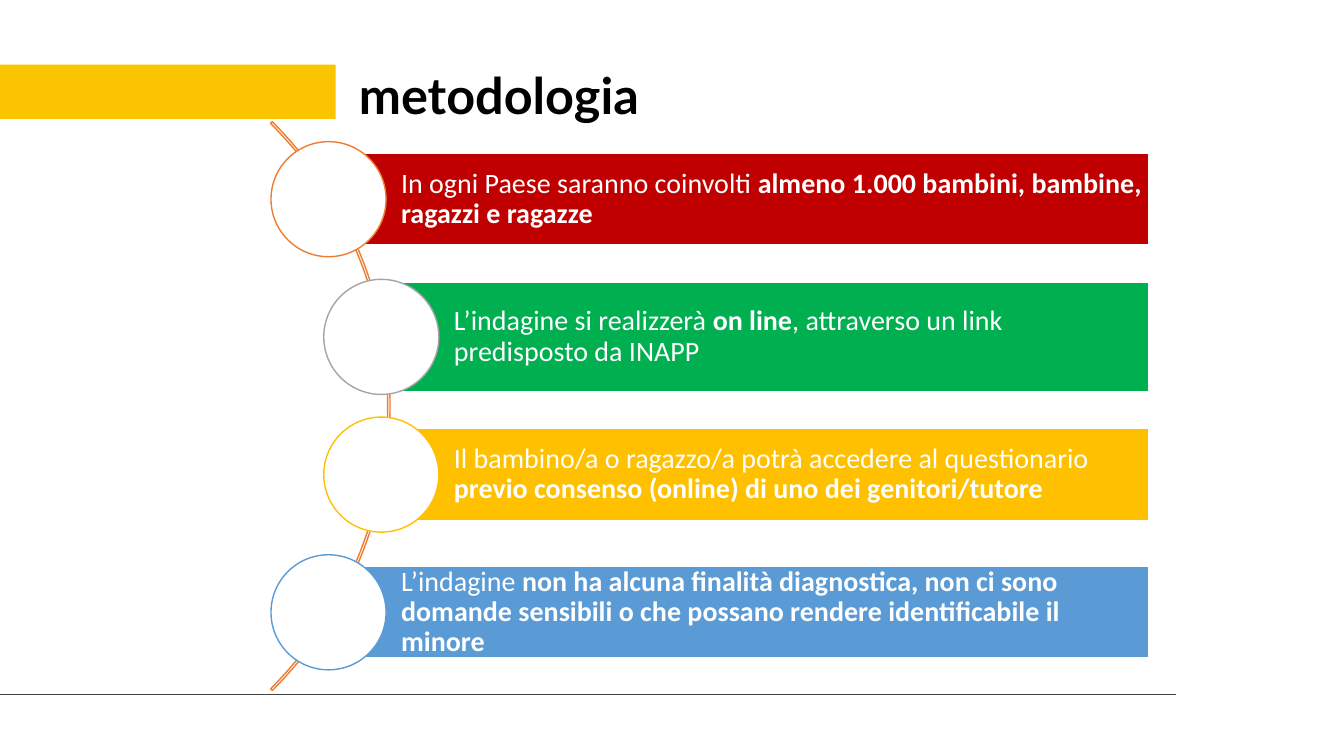
from dataclasses import dataclass

from lxml.etree import SubElement
from pptx import Presentation
from pptx.dml.color import RGBColor
from pptx.enum.shapes import MSO_CONNECTOR, MSO_SHAPE
from pptx.enum.text import MSO_ANCHOR, MSO_AUTO_SIZE, PP_ALIGN
from pptx.oxml.ns import qn
from pptx.util import Cm, Pt


@dataclass(frozen=True)
class Theme:
    white: str = "FFFFFF"
    black: str = "000000"
    band: str = "FAC400"
    rule: str = "404140"
    red: str = "C00000"
    green: str = "00B050"
    gold: str = "FFC000"
    blue: str = "5B9BD5"
    orange: str = "ED7D31"
    grey: str = "A5A5A5"
    head: str = "Lato"
    body: str = "Calibri"
    big: int = 36
    text: int = 20
    lead: float = 0.9


class Deck:
    def __init__(self, theme):
        self.theme = theme
        self.prs = Presentation()
        self.prs.slide_width, self.prs.slide_height = Cm(33.87), Cm(19.05)
        self.slide = self.prs.slides.add_slide(self.prs.slide_layouts[5])

    def shape(self, kind, box, fill=None, line=None):
        item = self.slide.shapes.add_shape(kind, *map(Cm, box))
        item.shadow.inherit = False
        if fill:
            item.fill.solid()
            item.fill.fore_color.rgb = RGBColor.from_string(fill)
        else:
            item.fill.background()
        if line:
            item.line.color.rgb = RGBColor.from_string(line)
            item.line.width = Pt(1)
        else:
            item.line.fill.background()
        return item

    def label(self, item, parts, font, size, color):
        """Fill one left-aligned paragraph from (text, bold) parts."""
        para = item.text_frame.paragraphs[0]
        para.alignment = PP_ALIGN.LEFT
        para.line_spacing = self.theme.lead
        para.space_before = Pt(0)
        for text, bold in parts:
            run = para.add_run()
            run.text = text
            run.font.name, run.font.size = font, Pt(size)
            run.font.bold = bold
            run.font.color.rgb = RGBColor.from_string(color)

    def title(self, text, box):
        item = self.slide.shapes.title
        item.left, item.top, item.width, item.height = map(Cm, box)
        frame = item.text_frame
        frame.auto_size = MSO_AUTO_SIZE.NONE
        frame.vertical_anchor = MSO_ANCHOR.TOP
        t = self.theme
        self.label(item, [(text, True)], t.head, t.big, t.black)

    def rule(self, left, right, y):
        line = self.slide.shapes.add_connector(
            MSO_CONNECTOR.STRAIGHT, Cm(left), Cm(y), Cm(right), Cm(y))
        line.line.color.rgb = RGBColor.from_string(self.theme.rule)
        line.line.width = Pt(1)
        SubElement(line._element.spPr, qn("a:effectLst"))

    def arc(self, box, *shape):
        item = self.shape(MSO_SHAPE.BLOCK_ARC, box, line=self.theme.orange)
        for i, value in enumerate(shape):
            item.adjustments[i] = value

    def step(self, left, mid, high, fill, ring, parts):
        """Draw a bar with a circle centred on its left edge."""
        t = self.theme
        right, size = 28.95, 2.9
        bar = self.shape(MSO_SHAPE.RECTANGLE,
                         (left, mid - high / 2, right - left, high), fill, t.white)
        frame = bar.text_frame
        frame.word_wrap = True
        frame.vertical_anchor = MSO_ANCHOR.MIDDLE
        frame.margin_left = Cm(1.83)
        frame.margin_right = frame.margin_top = frame.margin_bottom = Cm(0.15)
        self.label(bar, parts, t.body, t.text, t.white)
        self.shape(MSO_SHAPE.OVAL,
                   (left - size / 2, mid - size / 2, size, size), t.white, ring)


def main():
    t = Theme()
    deck = Deck(t)
    deck.shape(MSO_SHAPE.RECTANGLE, (0, 1.63, 8.46, 1.37), t.band)
    deck.rule(0, 29.64, 17.5)
    deck.title("metodologia", (8.79, 1.65, 15.42, 1.35))
    deck.arc((-10.44, 0.1, 20.27, 20.27), 189, 27, 0.003)

    outer, inner = 8.28, 9.61
    low, tall = 2.31, 2.77
    steps = [
        (outer, low, t.red, t.orange, [
            ("In ogni Paese saranno coinvolti ", False),
            ("almeno 1.000 bambini, bambine, ragazzi e ragazze", True)]),
        (inner, tall, t.green, t.grey, [
            ("L’indagine si realizzerà ", False),
            ("on line", True),
            (", attraverso un link predisposto da INAPP", False)]),
        (inner, low, t.gold, t.gold, [
            ("Il bambino/a o ragazzo/a potrà accedere al questionario ", False),
            ("previo consenso (online) di uno dei genitori/tutore", True)]),
        (outer, low, t.blue, t.blue, [
            ("L’indagine ", False),
            ("non ha alcuna finalità diagnostica, non ci sono domande "
             "sensibili o che possano rendere identificabile il minore", True)]),
    ]
    first, pitch = 5.02, 3.47
    for i, (left, high, fill, ring, parts) in enumerate(steps):
        deck.step(left, first + i * pitch, high, fill, ring, parts)
    deck.prs.save("out.pptx")


if __name__ == "__main__":
    main()
